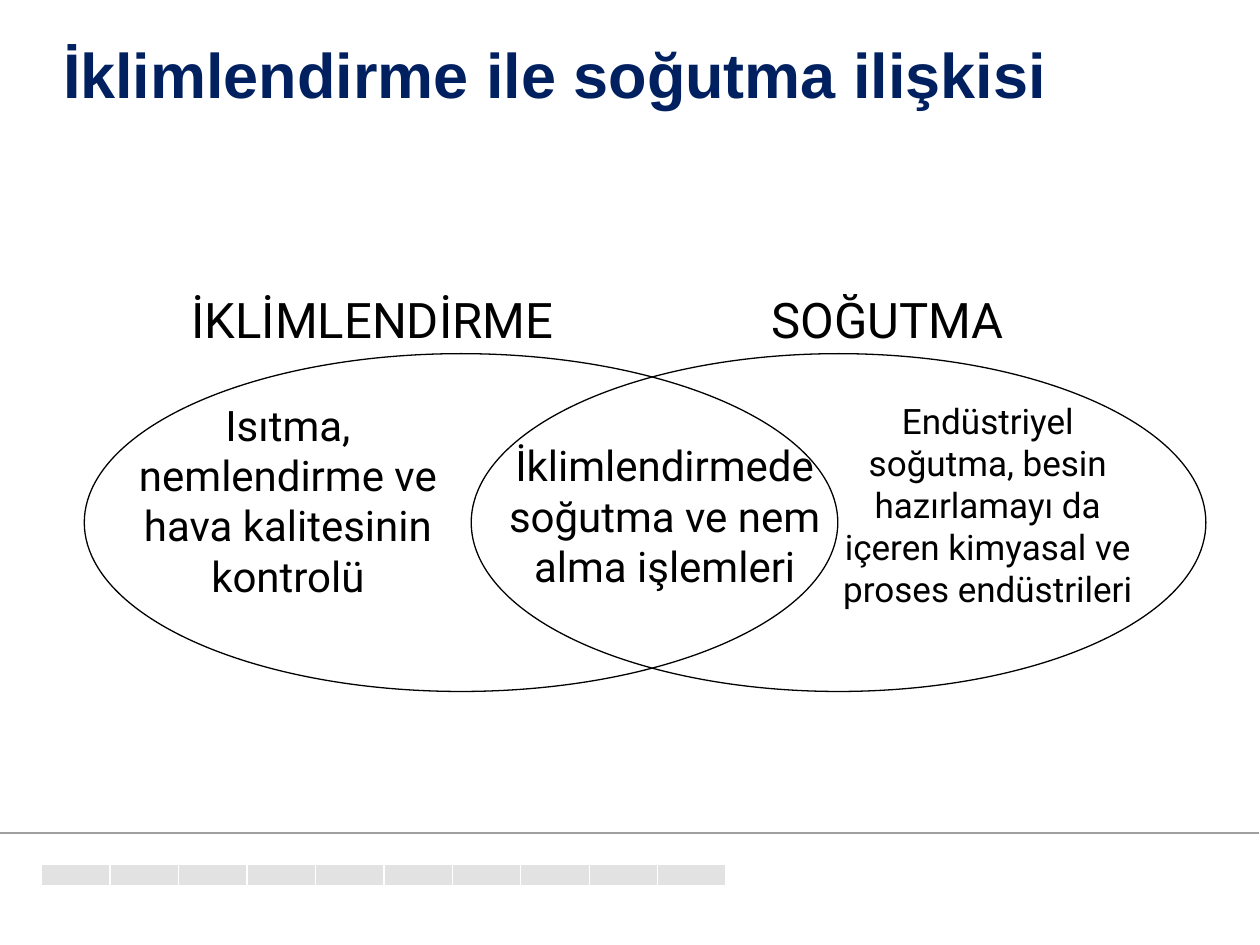
from lxml.etree import SubElement
from pptx import Presentation
from pptx.dml.color import RGBColor as RGB
from pptx.enum.shapes import MSO_CONNECTOR as Connector, MSO_SHAPE as Shape
from pptx.enum.text import MSO_ANCHOR as Anchor, MSO_AUTO_SIZE as AutoSize, PP_ALIGN as Align
from pptx.oxml.ns import qn
from pptx.util import Cm, Pt

THEME = {
    "title": {"name": "Arial", "size": Pt(36), "bold": True, "color": RGB(0x00, 0x20, 0x60)},
    "heading": {"name": "Roboto", "size": Pt(28), "color": RGB(0, 0, 0)},
    "body": {"name": "Roboto", "size": Pt(24), "color": RGB(0, 0, 0)},
    "small": {"name": "Roboto", "size": Pt(20), "color": RGB(0, 0, 0)},
    "outline": RGB(0, 0, 0),
    "segment": RGB(0xE2, 0xE2, 0xE2),
    "segment_edge": RGB(0xFF, 0xFF, 0xFF),
    "rule": RGB(0x9F, 0x9F, 0x9F),
    "line_width": Pt(0.75),
}

# Positions and sizes in centimetres: left, top, width, height
TITLE = ("İklimlendirme ile soğutma ilişkisi", (1.27, 0.76, 22.86, 1.83))
SETS = [(1.7, 7.13, 15.19, 6.81), (9.5, 7.13, 14.81, 6.81)]
LABELS = [
    ("Isıtma, nemlendirme ve hava kalitesinin kontrolü", "body", (2.11, 7.92, 7.39, 4.32)),
    ("İklimlendirmede soğutma ve nem alma işlemleri", "body", (9.3, 8.74, 8.2, 3.3)),
    ("Endüstriyel soğutma, besin hazırlamayı da içeren kimyasal ve proses endüstrileri",
     "small", (16.51, 7.92, 6.81, 4.5)),
    ("İKLİMLENDİRME", "heading", (3.3, 5.72, 8.41, 1.45)),
    ("SOĞUTMA", "heading", (13.69, 5.72, 8.41, 1.45)),
]
SEGMENT_COUNT = 10
FIRST_SEGMENT = (0.84, 17.42, 1.38, 0.43)
RULE_Y, RULE_END = 16.79, 25.38


def lengths(values):
    return [Cm(value) for value in values]


def style_font(font, style):
    for key, value in style.items():
        if key == "color":
            font.color.rgb = value
        else:
            setattr(font, key, value)


def add_outlined(slide, preset, box, edge, fill=None):
    shape = slide.shapes.add_shape(preset, *lengths(box))
    shape.shadow.inherit = False
    if fill is None:
        shape.fill.background()
    else:
        shape.fill.solid()
        shape.fill.fore_color.rgb = fill
    shape.line.color.rgb = edge
    shape.line.width = THEME["line_width"]


def add_footer(slide):
    left, top, width, height = FIRST_SEGMENT
    for index in range(SEGMENT_COUNT):
        add_outlined(slide, Shape.RECTANGLE, (left + index * width, top, width, height),
                     THEME["segment_edge"], THEME["segment"])
    rule = slide.shapes.add_connector(Connector.STRAIGHT, *lengths((0, RULE_Y, RULE_END, RULE_Y)))
    rule.line.color.rgb = THEME["rule"]
    rule.line.width = THEME["line_width"]
    SubElement(rule._element.spPr, qn("a:effectLst"))


def format_title(title):
    text, box = TITLE
    title.left, title.top, title.width, title.height = lengths(box)
    frame = title.text_frame
    frame.text = text
    frame_format = {"margin_left": 0, "margin_right": 0, "word_wrap": True,
                    "vertical_anchor": Anchor.TOP, "auto_size": AutoSize.NONE}
    for key, value in frame_format.items():
        setattr(frame, key, value)
    heading = frame.paragraphs[0]
    heading.alignment = Align.LEFT
    heading.line_spacing = 0.9
    style_font(heading.runs[0].font, THEME["title"])


def add_label(slide, text, style, box):
    frame = slide.shapes.add_textbox(*lengths(box)).text_frame
    frame.word_wrap = True
    frame.auto_size = AutoSize.SHAPE_TO_FIT_TEXT
    frame.text = text
    label = frame.paragraphs[0]
    label.alignment = Align.CENTER
    style_font(label.runs[0].font, THEME[style])


def main():
    deck = Presentation()
    deck.slide_width, deck.slide_height = lengths((25.4, 19.05))
    slide = deck.slides.add_slide(deck.slide_layouts[5])
    add_footer(slide)
    format_title(slide.shapes.title)
    for box in SETS:
        add_outlined(slide, Shape.OVAL, box, THEME["outline"])
    for text, style, box in LABELS:
        add_label(slide, text, style, box)
    deck.save("out.pptx")


if __name__ == "__main__":
    main()
